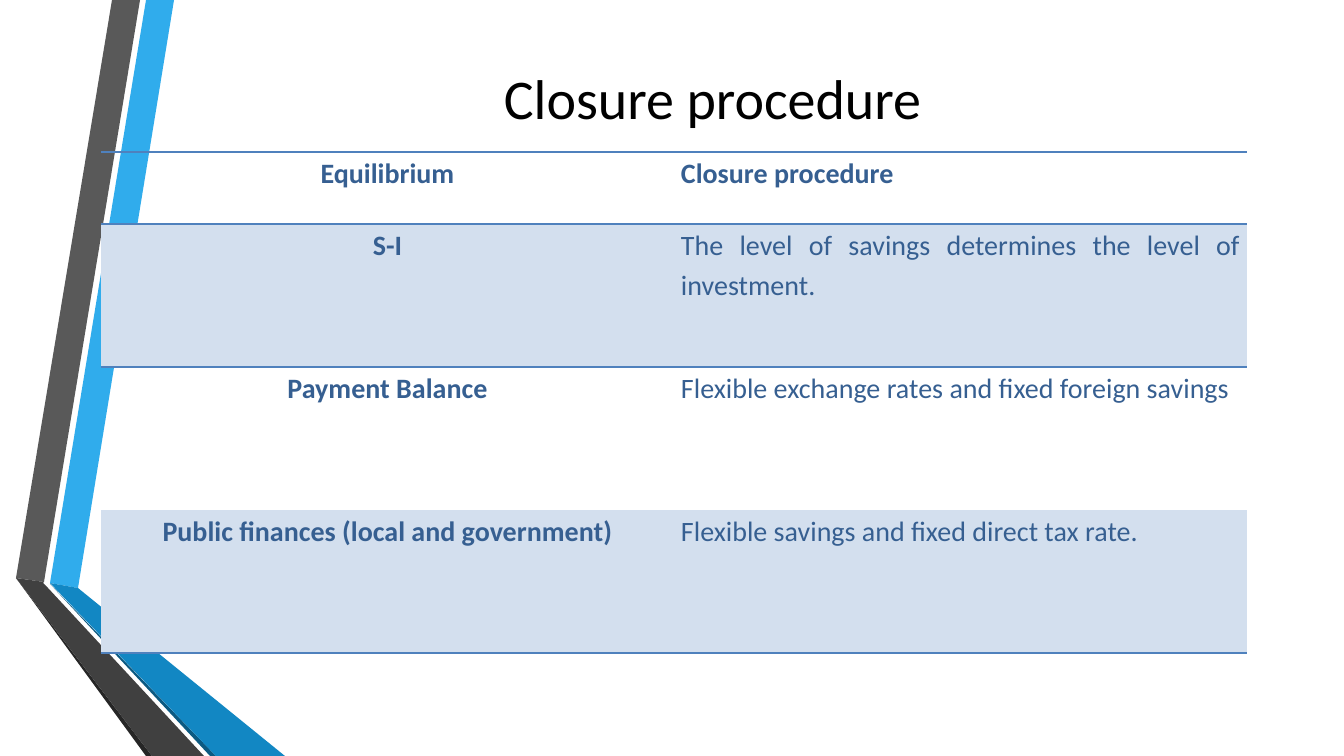
from lxml import etree
from pptx import Presentation, util as u
from pptx.dml.color import RGBColor
from pptx.enum import text as t
from pptx.oxml.ns import qn

# Content
TITLE = "Closure procedure"
ROWS = [
    ("Equilibrium", "Closure procedure"),
    ("S-I", "The level of savings determines the level of investment."),
    ("Payment Balance", "Flexible exchange rates and fixed foreign savings"),
    ("Public finances (local and government)",
     "Flexible savings and fixed direct tax rate."),
]
HEX = {
    "sky": "30ACEC", "grey": "595959", "black": "262626", "navy": "0C5A82",
    "blue": "1287C3", "coal": "404040", "title": "000000", "ink": "365F91",
    "band": "D3DFEE", "rule": "4F81BD",
}
RIBBON = [
    ("sky", [(50, 583), (78, 588), (174, 0), (146, 0)]),
    ("grey", [(140, 0), (112, 0), (16, 578), (44, 582)]),
    ("black", [(16, 578), (146, 756), (152, 756)]),
    ("navy", [(50, 584), (210, 756), (216, 756)]),
    ("blue", [(50, 583), (216, 756), (285, 756), (78, 588)]),
    ("coal", [(204, 756), (48, 588), (43, 583), (44, 582), (16, 578), (152, 756)]),
]

# Layout in px
SIZE = (1344, 756)
HEAD = (160, 0, 1105, 194)
LEFT, TOP, COL, ROW = 101, 152, 573, 143
TALL = [ROW // 2 + 1] + [ROW] * 3
EDGES = {0: "a:lnT", 1: "a:lnT", 3: "a:lnB"}
PLAIN = "{2D5ABB26-0587-4C30-8999-92F81FD0307C}"
SCALE = 914400 / 100.8


def px(n):
    return u.Emu(round(n * SCALE))


def color(name):
    return RGBColor.from_string(HEX[name])


def write(frame, words, size=20, ink="ink", bold=False, align="CENTER", space=1.0):
    frame.word_wrap = True
    par = frame.paragraphs[0]
    par.alignment = getattr(t.PP_ALIGN, align)
    par.line_spacing = space
    run = par.add_run()
    run.text = words
    font = run.font
    font.name, font.size, font.bold = "Calibri", u.Pt(size), bold
    font.color.rgb = color(ink)


def rule(cell, tag):
    line = etree.Element(qn(tag), w=str(u.Pt(1)))
    fill = etree.SubElement(line, qn("a:solidFill"))
    etree.SubElement(fill, qn("a:srgbClr"), val=HEX["rule"])
    cell._tc.get_or_add_tcPr().insert(0, line)


def main():
    deck = Presentation()
    deck.slide_width, deck.slide_height = map(px, SIZE)
    items = deck.slides.add_slide(deck.slide_layouts[6]).shapes

    # Folded ribbon
    for name, dots in RIBBON:
        path = items.build_freeform(*dots[0], scale=SCALE)
        path.add_line_segments(dots[1:], close=True)
        part = path.convert_to_shape()
        part.shadow.inherit = False
        part.fill.solid()
        part.fill.fore_color.rgb = color(name)
        part.line.fill.background()

    # Title
    frame = items.add_textbox(*map(px, HEAD)).text_frame
    frame.vertical_anchor = t.MSO_ANCHOR.MIDDLE
    write(frame, TITLE, size=40, ink="title")

    # Table
    grid = items.add_table(len(ROWS), 2, px(LEFT), px(TOP),
                           px(2 * COL), px(sum(TALL))).table
    grid._tbl.tblPr.find(qn("a:tableStyleId")).text = PLAIN
    for col in grid.columns:
        col.width = px(COL)
    for i, row in enumerate(ROWS):
        grid.rows[i].height = px(TALL[i])
        for j, words in enumerate(row):
            cell = grid.cell(i, j)
            cell.margin_left = cell.margin_right = px(7)
            cell.margin_top = cell.margin_bottom = 0
            write(cell.text_frame, words, bold=i == 0 or j == 0,
                  align="JUSTIFY" if j else "CENTER", space=1.15)
            if i % 2:
                cell.fill.solid()
                cell.fill.fore_color.rgb = color("band")
            else:
                cell.fill.background()
            if i in EDGES:
                rule(cell, EDGES[i])

    deck.save("out.pptx")


if __name__ == "__main__":
    main()
